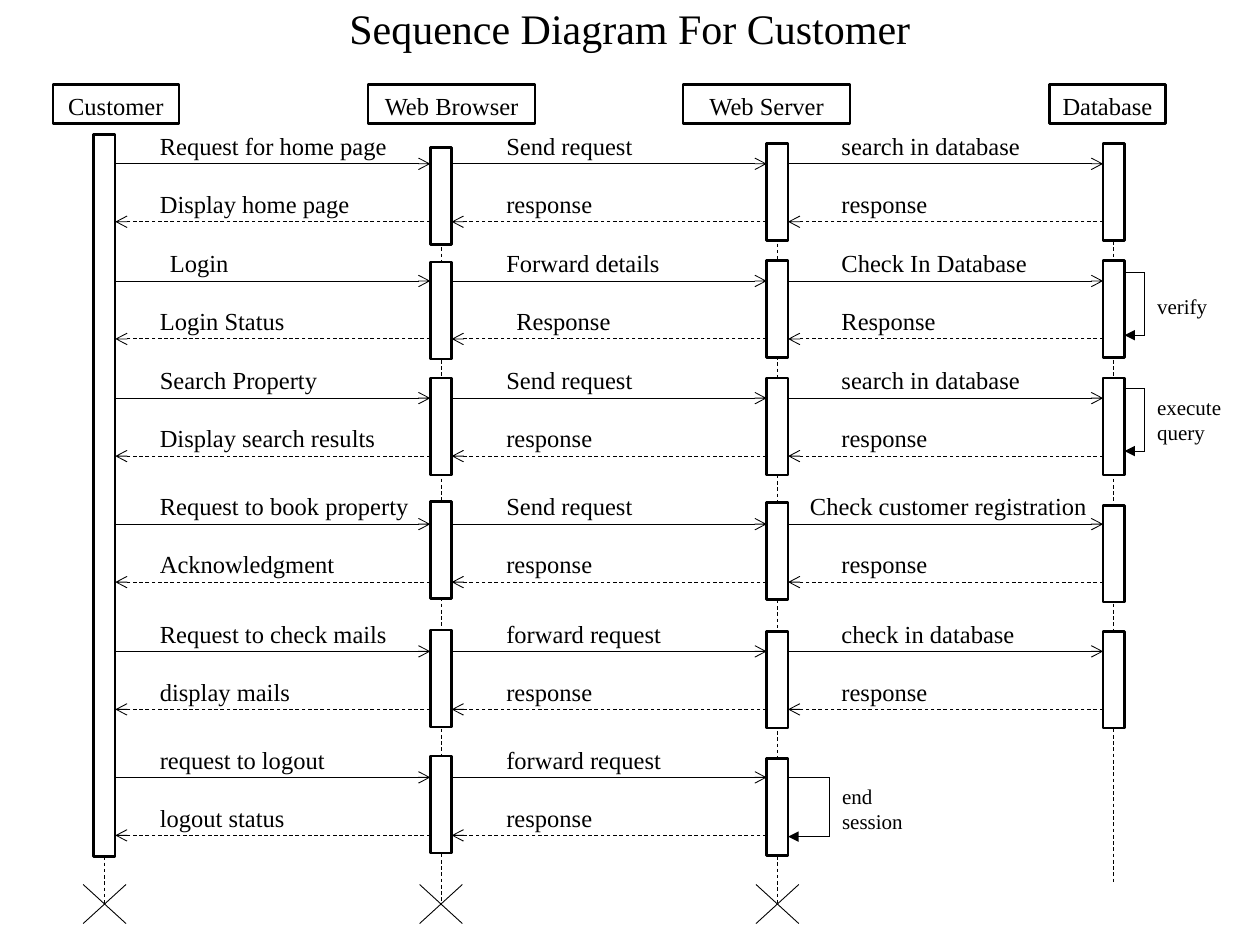
"""Build a slide with the sequence diagram for a customer."""
import dataclasses

import pptx
import pptx.dml.color
import pptx.enum.dml
import pptx.enum.shapes
import pptx.enum.text
import pptx.oxml.ns
import pptx.oxml.xmlchemy
import pptx.util

Inches = pptx.util.Inches
Pt = pptx.util.Pt
ALIGN = pptx.enum.text.PP_ALIGN
ANCHOR = pptx.enum.text.MSO_ANCHOR
RECT = pptx.enum.shapes.MSO_SHAPE.RECTANGLE


@dataclasses.dataclass(frozen=True)
class Theme:
    font: str = "Times New Roman"
    ink: pptx.dml.color.RGBColor = pptx.dml.color.RGBColor(0, 0, 0)
    paper: pptx.dml.color.RGBColor = pptx.dml.color.RGBColor(255, 255, 255)
    title: int = 24
    label: int = 14
    note: int = 12
    thin: float = 0.5
    header: float = 1.25
    bar: float = 1.5


THEME = Theme()
TITLE = "Sequence Diagram For Customer"
# name, header left, header width, lifeline top, lifeline bottom, bar tops, bar height
LIFELINES = [
    ("Customer", 0.42, 1, 1.29, 7.18, [1.07], 5.73),
    ("Web Browser", 2.92, 1.33, 1.22, 7.18, [1.17, 2.08, 3, 3.98, 5, 6], 0.77),
    ("Web Server", 5.42, 1.33, 1.14, 7.18, [1.14, 2.07, 3, 3.99, 5.01, 6.02], 0.77),
    ("Database", 8.33, 0.92, 1.22, 7.02, [1.14, 2.07, 3, 4.01, 5.01], 0.77),
]
EXCHANGES = [
    (1.3, [("Request for home page", "Display home page"),
           ("Send request", "response"),
           ("search in database", "response")]),
    (2.23, [("Login", "Login Status"),
            ("Forward details", "Response"),
            ("Check In Database", "Response")]),
    (3.16, [("Search Property", "Display search results"),
            ("Send request", "response"),
            ("search in database", "response")]),
    (4.16, [("Request to book property", "Acknowledgment"),
            ("Send request", "response"),
            ("Check customer registration", "response")]),
    (5.17, [("Request to check mails", "display mails"),
            ("forward request", "response"),
            ("check in database", "response")]),
    (6.17, [("request to logout", "logout status"),
            ("forward request", "response")]),
]
LABEL_LEFT = [1.17, 3.92, 6.58]
LABEL_SHIFT = {("Login", 0): 0.08, ("Response", 1): 0.08,
               ("Check customer registration", 2): -0.25}
LABEL_WIDTH = {"Login": 0.92, "Request for home page": 2.17,
               "Display search results": 2.33, "Request to book property": 2.33,
               "Check customer registration": 2.42, "Request to check mails": 2.08}
SELF_CALLS = [
    ("verify", 3, 0.16, 2.16, 2.66, 2.28, 0.3),
    ("execute query", 3, 0.16, 3.08, 3.58, 3.08, 0.51),
    ("end session", 2, 0.33, 6.17, 6.64, 6.17, 0.47),
]
FIRST_X, STEP_X, HALF_BAR = 0.83, 2.67, 0.085
REPLY_GAP, LABEL_HEIGHT, HEADER_TOP = 0.46, 0.31, 0.67
CROSS_TOP, CROSS_BOTTOM, CROSS_HALF = 7.02, 7.33, 0.17


def center(i):
    return FIRST_X + i * STEP_X


def write(sp, text, size=THEME.label, align=ALIGN.LEFT, anchor=ANCHOR.TOP, insets=None):
    tf = sp.text_frame
    tf.word_wrap = True
    tf.vertical_anchor = anchor
    if insets:
        (tf.margin_left, tf.margin_top,
         tf.margin_right, tf.margin_bottom) = map(Inches, insets)
    p = tf.paragraphs[0]
    p.alignment = align
    r = p.add_run()
    r.text = text
    r.font.name = THEME.font
    r.font.size = Pt(size)
    r.font.color.rgb = THEME.ink


def add_label(s, text, x, y, w, h, **fmt):
    write(s.shapes.add_textbox(*map(Inches, (x, y, w, h))), text, **fmt)


def add_box(s, x, y, w, h, weight, filled=True):
    sp = s.shapes.add_shape(RECT, *map(Inches, (x, y, w, h)))
    sp.shadow.inherit = False
    if filled:
        sp.fill.solid()
        sp.fill.fore_color.rgb = THEME.paper
    else:
        sp.fill.background()
    sp.line.color.rgb = THEME.ink
    sp.line.width = Pt(weight)
    return sp


def add_line(s, x1, y1, x2, y2, dashed=False, arrow=None):
    cx = s.shapes.add_connector(pptx.enum.shapes.MSO_CONNECTOR.STRAIGHT,
                                *map(Inches, (x1, y1, x2, y2)))
    cx.line.color.rgb = THEME.ink
    cx.line.width = Pt(THEME.thin)
    if dashed:
        cx.line.dash_style = pptx.enum.dml.MSO_LINE.DASH
    if arrow:
        end = pptx.oxml.xmlchemy.OxmlElement("a:tailEnd")
        end.set("type", arrow)
        cx.line._get_or_add_ln().append(end)
    cx._element.spPr.append(pptx.oxml.xmlchemy.OxmlElement("a:effectLst"))


def draw_lifelines(s):
    for i, (name, left, width, top, bottom, bars, height) in enumerate(LIFELINES):
        x = center(i)
        add_line(s, x, top, x, bottom, dashed=True)
        sp = add_box(s, left, HEADER_TOP, width, LABEL_HEIGHT, THEME.header, filled=False)
        write(sp, name, align=ALIGN.CENTER)
        for bar_top in bars:
            add_box(s, x - HALF_BAR, bar_top, 2 * HALF_BAR, height, THEME.bar)
        if i < len(LIFELINES) - 1:
            for y1, y2 in ((CROSS_TOP, CROSS_BOTTOM), (CROSS_BOTTOM, CROSS_TOP)):
                add_line(s, x - CROSS_HALF, y1, x + CROSS_HALF, y2)


def draw_exchanges(s):
    for top, pairs in EXCHANGES:
        for i, pair in enumerate(pairs):
            ends = (center(i) + HALF_BAR, center(i + 1) - HALF_BAR)
            for is_reply, text in enumerate(pair):
                y = top + is_reply * REPLY_GAP
                start, stop = reversed(ends) if is_reply else ends
                add_line(s, start, y, stop, y, dashed=bool(is_reply), arrow="arrow")
                x = LABEL_LEFT[i] + LABEL_SHIFT.get((text, i), 0)
                add_label(s, text, x, y - LABEL_HEIGHT,
                          LABEL_WIDTH.get(text, 1.75), LABEL_HEIGHT)


def draw_self_calls(s):
    for text, i, reach, top, bottom, label_top, height in SELF_CALLS:
        x = center(i) + HALF_BAR
        add_line(s, x, top, x + reach, top)
        add_line(s, x + reach, top, x + reach, bottom)
        add_line(s, x + reach, bottom, x, bottom, arrow="triangle")
        add_label(s, text, x + reach, label_top, 0.75, height, size=THEME.note)


def main():
    prs = pptx.Presentation()
    prs.slide_width, prs.slide_height = Inches(10), Inches(7.5)
    s = prs.slides.add_slide(prs.slide_layouts[6])
    add_label(s, TITLE, 0.5, 0, 9, 0.42, size=THEME.title, align=ALIGN.CENTER,
              anchor=ANCHOR.BOTTOM, insets=(0, 0.05, 0, 0))
    draw_lifelines(s)
    draw_exchanges(s)
    draw_self_calls(s)
    prs.save("out.pptx")


if __name__ == "__main__":
    main()
